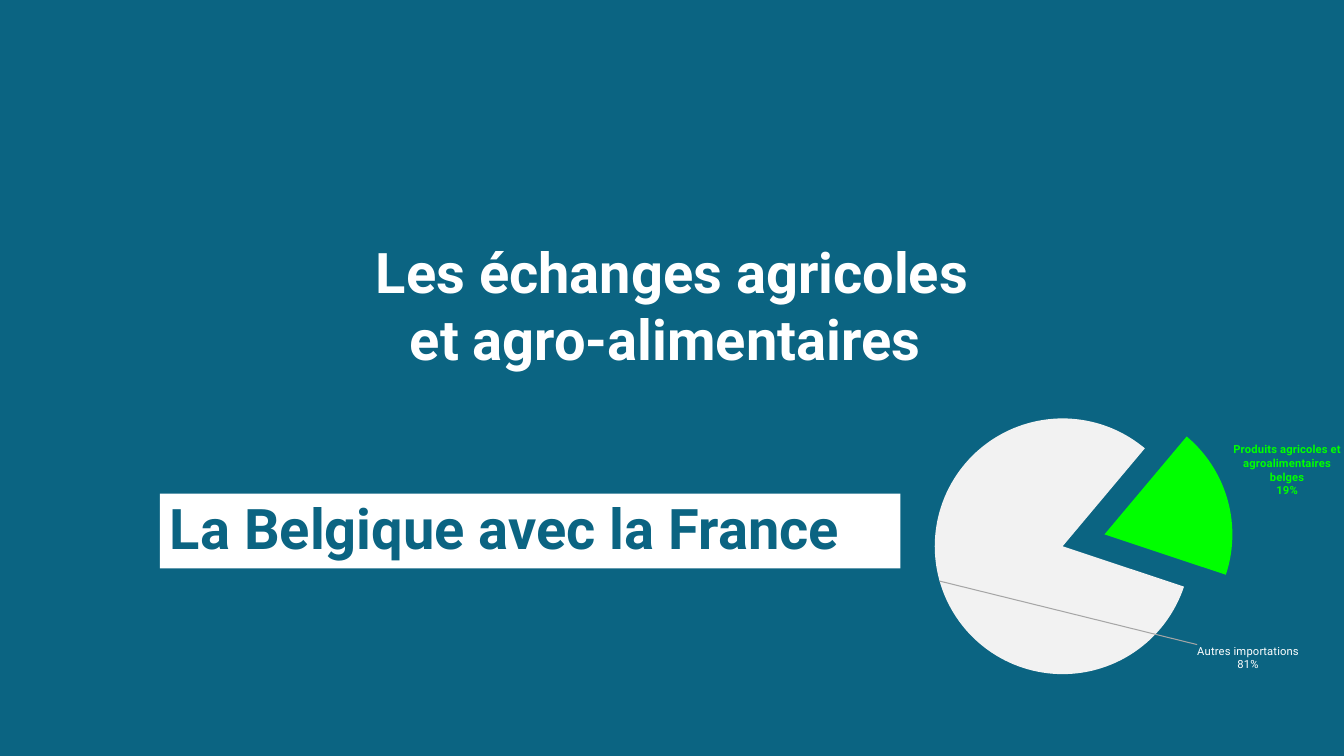
from lxml import etree
from pptx import Presentation
from pptx import util as u
from pptx.chart import data as chart_data
from pptx.dml.color import RGBColor
from pptx.enum import chart as charts, shapes, text
from pptx.oxml import parse_xml
from pptx.oxml.ns import nsdecls, qn

COLOURS = {"blue": "0B6482", "white": "FFFFFF", "green": "00FF00",
           "pale": "F2F2F2", "leader": "A6A6A6"}
FONT = "Roboto"
WIDTH, HEIGHT = u.Inches(13.33), u.Inches(7.5)


def colour(name):
    return RGBColor.from_string(COLOURS[name])


def fill(target, name):
    target.fill.solid()
    target.fill.fore_color.rgb = colour(name)


def box(left, top, width, height):
    """Turn shares of the slide's size into lengths."""
    return (int(WIDTH * left), int(HEIGHT * top),
            int(WIDTH * width), int(HEIGHT * height))


def add_run(paragraph, words, size, name, bold=True):
    run = paragraph.add_run()
    run.text = words
    run.font.name = FONT
    run.font.size = u.Pt(size)
    run.font.bold = bold
    run.font.color.rgb = colour(name)


def add_title(slide, words):
    title = slide.shapes.title
    title.left, title.top, title.width, title.height = box(0.25, 0.307, 0.5, 0.193)
    frame = title.text_frame
    frame.word_wrap = True
    frame.auto_size = text.MSO_AUTO_SIZE.NONE
    frame.vertical_anchor = text.MSO_ANCHOR.TOP
    paragraph = frame.paragraphs[0]
    paragraph.alignment = text.PP_ALIGN.CENTER
    add_run(paragraph, words, 40, "white")


def add_banner(slide, words):
    banner = slide.shapes.add_shape(shapes.MSO_SHAPE.RECTANGLE,
                                    *box(0.119, 0.653, 0.551, 0.099))
    banner.shadow.inherit = False
    fill(banner, "white")
    banner.line.fill.background()
    frame = banner.text_frame
    frame.word_wrap = True
    frame.vertical_anchor = text.MSO_ANCHOR.MIDDLE
    paragraph = frame.paragraphs[0]
    paragraph.alignment = text.PP_ALIGN.LEFT
    paragraph.line_spacing = 0.9
    add_run(paragraph, words, 40, "blue")


def manual_layout(x, y, size=None):
    """Place a chart part by shares of the chart; a size makes it the inner plot."""
    values = {"x": x, "y": y}
    if size:
        values = {"layoutTarget": "inner", "xMode": "edge", "yMode": "edge",
                  **values, "w": size[0], "h": size[1]}
    layout = parse_xml(f"<c:layout {nsdecls('c')}><c:manualLayout/></c:layout>")
    for tag, value in values.items():
        etree.SubElement(layout[0], qn(f"c:{tag}")).set("val", str(value))
    return layout


def label_point(point, lines, name, bold, shift):
    """Write the label; a shift moves it from its usual place by shares of the chart."""
    label = point.data_label
    frame = label.text_frame
    for index, line in enumerate(lines):
        paragraph = frame.add_paragraph() if index else frame.paragraphs[0]
        add_run(paragraph, line, 8, name, bold)
    label.position = charts.XL_LABEL_POSITION.OUTSIDE_END
    if shift:
        label._dLbl.insert(1, manual_layout(*shift))


def add_pie(slide):
    data = chart_data.CategoryChartData(number_format="0%")
    data.categories = ["Produits agricoles et agro-alimentaires", "Autres"]
    data.add_series("Series 1", (0.19, 0.81))
    chart = slide.shapes.add_chart(charts.XL_CHART_TYPE.PIE,
                                   *box(0.563, 0.476, 0.477, 0.455), data).chart
    chart.has_legend = chart.has_title = False
    chart.font.name, chart.font.size = FONT, u.Pt(8)
    chart.font.color.rgb = colour("white")

    plot = chart.plots[0]
    plot.vary_by_categories = False
    angle = plot._element.find(qn("c:firstSliceAng"))
    if angle is None:
        angle = etree.SubElement(plot._element, qn("c:firstSliceAng"))
    angle.set("val", "40")

    series = plot.series[0]
    labels = series.data_labels
    labels.show_value = labels.show_category_name = True
    labels.number_format, labels.number_format_is_linked = "0%", False
    labels.position = charts.XL_LABEL_POSITION.OUTSIDE_END
    slices = [
        ("green", ["Produits agricoles et", "agroalimentaires", "belges", "19%"],
         "green", True, None),
        ("pale", ["Autres importations", "81%"], "white", False, (0.57, 0.18)),
    ]
    for index, (slice_fill, lines, name, bold, shift) in enumerate(slices):
        point = series.points[index]
        fill(point.format, slice_fill)
        point.format.line.fill.background()
        label_point(point, lines, name, bold, shift)

    explosion = parse_xml(f'<c:explosion {nsdecls("c")} val="17"/>')
    series._element.find(qn("c:dPt")).addprevious(explosion)
    for point in series._element.findall(qn("c:dPt")):
        etree.SubElement(point, qn("c:explosion")).set("val", "17")
        point.find(qn("c:spPr")).addprevious(point[-1])

    label_xml = labels._element
    for leader in label_xml.findall(qn("c:showLeaderLines")):
        label_xml.remove(leader)
    etree.SubElement(label_xml, qn("c:showLeaderLines")).set("val", "1")
    label_xml.append(parse_xml(
        f'<c:leaderLines {nsdecls("c", "a")}><c:spPr><a:ln w="9525"><a:solidFill>'
        f'<a:srgbClr val="{COLOURS["leader"]}"/></a:solidFill></a:ln></c:spPr>'
        '</c:leaderLines>'))

    area = plot._element.getparent()
    for layout in area.findall(qn("c:layout")):
        area.remove(layout)
    area.insert(0, manual_layout(0.27, 0.09, (0.48, 0.87)))


def main():
    presentation = Presentation()
    presentation.slide_width, presentation.slide_height = WIDTH, HEIGHT
    slide = presentation.slides.add_slide(presentation.slide_layouts[5])
    fill(slide.background, "blue")
    add_title(slide, "Les échanges agricoles et agro-alimentaires ")
    add_banner(slide, "La Belgique avec la France")
    add_pie(slide)
    presentation.save("out.pptx")


if __name__ == "__main__":
    main()
